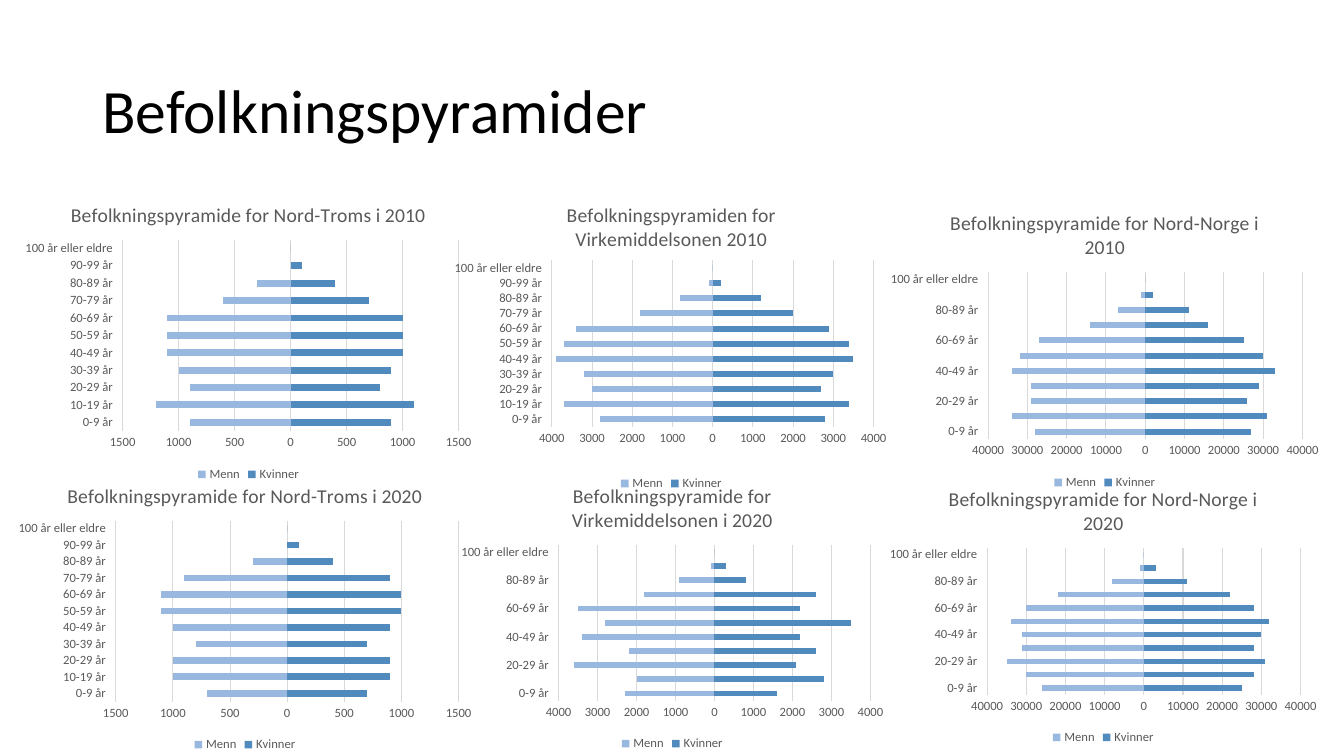
from lxml import etree
from pptx import Presentation
from pptx.chart.data import CategoryChartData
from pptx.dml.color import RGBColor
from pptx.enum.chart import XL_CHART_TYPE, XL_LEGEND_POSITION, XL_TICK_LABEL_POSITION, XL_TICK_MARK
from pptx.enum.text import MSO_ANCHOR, MSO_AUTO_SIZE, PP_ALIGN
from pptx.oxml.ns import qn
from pptx.util import Pt

STACKED = XL_CHART_TYPE.BAR_STACKED
BOTTOM = XL_LEGEND_POSITION.BOTTOM
LOW = XL_TICK_LABEL_POSITION.LOW
NO_TICK = XL_TICK_MARK.NONE
MIDDLE = MSO_ANCHOR.MIDDLE
NO_FIT = MSO_AUTO_SIZE.NONE
LEFT, CENTER = PP_ALIGN.LEFT, PP_ALIGN.CENTER

FONT = "Calibri"
COLORS = {"title": "000000", "label": "595959", "grid": "D9D9D9",
          "Menn": "98B8E0", "Kvinner": "518ABD"}
TITLE = "Befolkningspyramider"
AGES = [f"{a}-{a + 9} år" for a in [0, *range(10, 100, 10)]] + ["100 år eller eldre"]

PYRAMIDS = [
    {"title": "Befolkningspyramide for Nord-Troms i 2010",
     "box": (11.5, 133.2, 331.9, 213.8), "limit": 1500, "step": 500,
     "Menn": [900, 1200, 900, 1000, 1100, 1100, 1100, 600, 300, 0, 0],
     "Kvinner": [900, 1100, 800, 900, 1000, 1000, 1000, 700, 400, 100, 0]},
    {"title": "Befolkningspyramiden for Virkemiddelsonen 2010",
     "box": (315.4, 133.2, 328.3, 220.3), "limit": 4000, "step": 1000,
     "plot": {"x": 0.24, "y": 0.24, "w": 0.7, "h": 0.54},
     "Menn": [2800, 3700, 3000, 3200, 3900, 3700, 3400, 1800, 800, 100, 0],
     "Kvinner": [2800, 3400, 2700, 3000, 3500, 3400, 2900, 2000, 1200, 200, 0]},
    {"title": "Befolkningspyramide for Nord-Norge i 2010",
     "box": (630, 139, 318.2, 213.8), "limit": 40000, "step": 10000,
     "Menn": [28000, 34000, 29000, 29000, 34000, 32000, 27000, 14000, 7000, 1000, 0],
     "Kvinner": [27000, 31000, 26000, 29000, 33000, 30000, 25000, 16000, 11000, 2000, 0]},
    {"title": "Befolkningspyramide for Nord-Troms i 2020",
     "box": (6.5, 334.1, 337, 205.9), "limit": 1500, "step": 500,
     "Menn": [700, 1000, 1000, 800, 1000, 1100, 1100, 900, 300, 0, 0],
     "Kvinner": [700, 900, 900, 700, 900, 1000, 1000, 900, 400, 100, 0]},
    {"title": "Befolkningspyramide for Virkemiddelsonen i 2020",
     "box": (323.3, 334.1, 313.9, 205.2), "limit": 4000, "step": 1000,
     "Menn": [2300, 2000, 3600, 2200, 3400, 2800, 3500, 1800, 900, 100, 0],
     "Kvinner": [1600, 2800, 2100, 2600, 2200, 3500, 2200, 2600, 800, 300, 0]},
    {"title": "Befolkningspyramide for Nord-Norge i 2020",
     "box": (629.3, 336.2, 317.5, 198.7), "limit": 40000, "step": 10000,
     "Menn": [26000, 30000, 35000, 31000, 31000, 34000, 30000, 22000, 8000, 1000, 0],
     "Kvinner": [25000, 28000, 31000, 28000, 30000, 32000, 28000, 22000, 11000, 3000, 0]},
]


def rgb(name):
    return RGBColor.from_string(COLORS[name])


def style_font(font, size, color):
    font.name, font.size, font.bold = FONT, Pt(size), False
    font.color.rgb = rgb(color)


def write(tf, text, size=14, color="label", align=CENTER, spacing=None):
    p = tf.paragraphs[0]
    p.alignment, p.line_spacing = align, spacing
    r = p.add_run()
    r.text = text
    style_font(r.font, size, color)


def draw_line(line, color):
    line.color.rgb = rgb(color)
    line.width = Pt(0.75)


def place_plot(chart, plot):
    area = chart.element.find(".//" + qn("c:plotArea"))
    for old in area.findall(qn("c:layout")):
        area.remove(old)
    layout = etree.Element(qn("c:layout"))
    area.insert(0, layout)
    manual = etree.SubElement(layout, qn("c:manualLayout"))
    settings = {"layoutTarget": "inner", "xMode": "edge", "yMode": "edge", **plot}
    for tag, value in settings.items():
        etree.SubElement(manual, qn("c:" + tag)).set("val", str(value))


def add_pyramid(s, pyramid):
    data = CategoryChartData(number_format="0;0")
    data.categories = AGES
    data.add_series("Menn", [-n for n in pyramid["Menn"]])
    data.add_series("Kvinner", pyramid["Kvinner"])
    chart = s.shapes.add_chart(STACKED, *map(Pt, pyramid["box"]), data).chart
    style_font(chart.font, 10, "title")

    chart.has_title = True
    write(chart.chart_title.text_frame, pyramid["title"])
    chart.chart_title.include_in_layout = False
    chart.has_legend = True
    chart.legend.position = BOTTOM
    chart.legend.include_in_layout = False
    style_font(chart.legend.font, 9, "label")

    bars = chart.plots[0]
    bars.gap_width, bars.overlap, bars.vary_by_categories = 150, 100, False
    for series in bars.series:
        series.invert_if_negative = False
        series.format.fill.solid()
        series.format.fill.fore_color.rgb = rgb(series.name)

    ages, people = chart.category_axis, chart.value_axis
    for axis in (ages, people):
        axis.major_tick_mark = axis.minor_tick_mark = NO_TICK
        style_font(axis.tick_labels.font, 9, "label")
    ages.tick_label_position = LOW
    ages.has_major_gridlines = False
    draw_line(ages.format.line, "grid")
    people.minimum_scale, people.maximum_scale = -pyramid["limit"], pyramid["limit"]
    people.major_unit = pyramid["step"]
    people.tick_labels.number_format = "0;0"
    people.tick_labels.number_format_is_linked = False
    people.format.line.fill.background()
    people.has_major_gridlines = True
    draw_line(people.major_gridlines.format.line, "grid")
    if "plot" in pyramid:
        place_plot(chart, pyramid["plot"])


def main():
    prs = Presentation()
    prs.slide_width, prs.slide_height = Pt(960), Pt(540)
    s = prs.slides.add_slide(prs.slide_layouts[5])
    title = s.shapes.title
    title.left, title.top, title.width, title.height = map(Pt, (66, 28.75, 828, 104.4))
    tf = title.text_frame
    tf.word_wrap, tf.auto_size, tf.vertical_anchor = True, NO_FIT, MIDDLE
    write(tf, TITLE, size=44, color="title", align=LEFT, spacing=0.9)
    for pyramid in PYRAMIDS:
        add_pyramid(s, pyramid)
    prs.save("out.pptx")


if __name__ == "__main__":
    main()
